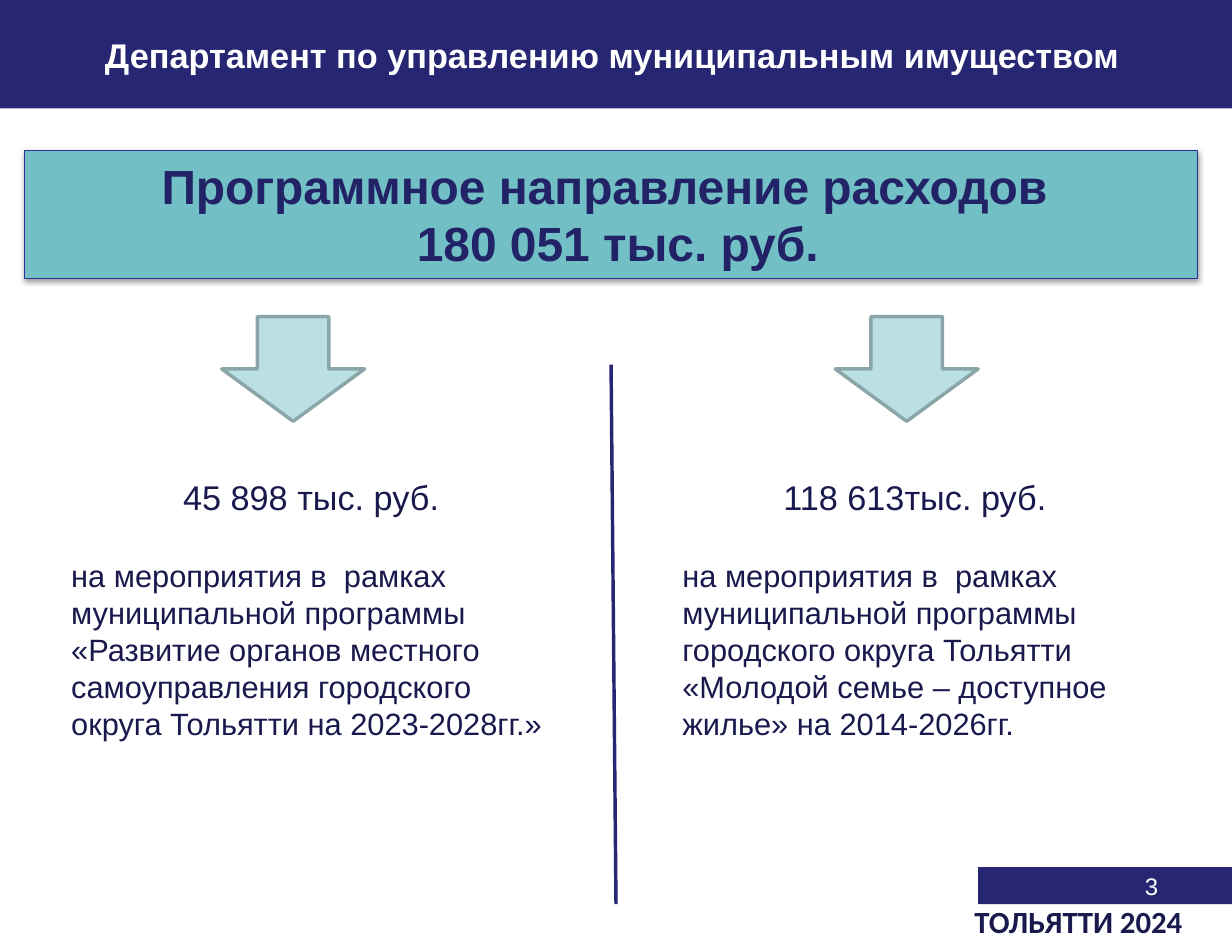
from lxml import etree
from pptx import Presentation
from pptx.dml.color import RGBColor
from pptx.enum.shapes import MSO_CONNECTOR, MSO_SHAPE
from pptx.enum.text import MSO_ANCHOR, PP_ALIGN
from pptx.oxml import parse_xml
from pptx.oxml.ns import nsdecls, qn
from pptx.util import Inches, Pt

NAVY = RGBColor(0x26, 0x26, 0x73)
INK = RGBColor(0x19, 0x19, 0x4D)
HEADLINE = RGBColor(0x22, 0x22, 0x67)
TEAL = RGBColor(0x72, 0xBF, 0xC5)
BANNER_EDGE = RGBColor(0x2F, 0x2F, 0x98)
PALE_TEAL = RGBColor(0xBB, 0xE0, 0xE3)
ARROW_EDGE = RGBColor(0x8A, 0xA6, 0xA8)
WHITE = RGBColor(0xFF, 0xFF, 0xFF)

PROGRAMMES = [
    (1.8, (0.48, 3.82, 4.17, 2.47), "45 898 тыс. руб. ",
     "на мероприятия в  рамках муниципальной программы «Развитие органов "
     "местного самоуправления городского округа Тольятти на 2023-2028гг.»"),
    (6.78, (5.44, 3.82, 4.05, 2.52), "118 613тыс. руб. ",
     "на мероприятия в  рамках муниципальной программы городского округа "
     "Тольятти «Молодой семье – доступное жилье» на 2014-2026гг."),
]


def add_block(slide, kind, box, fill, edge=None, edge_width=0):
    block = slide.shapes.add_shape(kind, *map(Inches, box))
    block.shadow.inherit = False
    block.fill.solid()
    block.fill.fore_color.rgb = fill
    if edge is None:
        block.line.fill.background()
    else:
        block.line.color.rgb = edge
        block.line.width = Pt(edge_width)
    return block


def add_label(slide, box):
    label = slide.shapes.add_textbox(*map(Inches, box))
    label.text_frame.word_wrap = True
    return label


def write(paragraph, text, size, color, align=PP_ALIGN.LEFT, **extra):
    paragraph.alignment = align
    run = paragraph.add_run()
    run.text = text
    font_format = {"name": "Arial", "size": Pt(size), "bold": False} | extra
    for attribute, value in font_format.items():
        setattr(run.font, attribute, value)
    run.font.color.rgb = color


def cast_shadow(block):
    effects = block._element.spPr.find(qn("a:effectLst"))
    effects.append(parse_xml(
        f'<a:outerShdw {nsdecls("a")} blurRad="{Pt(3.1)}" dist="{Pt(1.6)}" '
        'dir="5400000" rotWithShape="0"><a:srgbClr val="000000">'
        '<a:alpha val="38000"/></a:srgbClr></a:outerShdw>'))


def add_header(slide):
    header = add_block(slide, MSO_SHAPE.RECTANGLE, (0, 0, 10, 0.88), NAVY)
    frame = header.text_frame
    frame_format = {
        "margin_left": Inches(0.2), "margin_top": Inches(0.12),
        "margin_right": Inches(0.26), "margin_bottom": Inches(0.05),
        "vertical_anchor": MSO_ANCHOR.MIDDLE, "word_wrap": True,
    }
    for attribute, value in frame_format.items():
        setattr(frame, attribute, value)
    title = frame.paragraphs[0]
    title.line_spacing = 0.8
    write(title, "Департамент по управлению муниципальным имуществом",
          20, WHITE, PP_ALIGN.CENTER, bold=True)


def add_banner(slide):
    banner = add_block(slide, MSO_SHAPE.RECTANGLE, (0.2, 1.22, 9.52, 1.04),
                       TEAL, BANNER_EDGE, 0.75)
    cast_shadow(banner)
    frame = banner.text_frame
    frame.vertical_anchor = MSO_ANCHOR.TOP
    heading, total = frame.paragraphs[0], frame.add_paragraph()
    for paragraph, text in ((heading, "Программное направление расходов "),
                            (total, " 180 051 тыс. руб.")):
        write(paragraph, text, 28, HEADLINE, PP_ALIGN.CENTER, bold=True)


def add_divider(slide):
    divider = slide.shapes.add_connector(
        MSO_CONNECTOR.STRAIGHT, *map(Inches, (4.96, 2.96, 5, 7.34)))
    divider.line.color.rgb = NAVY
    divider.line.width = Pt(2)
    etree.SubElement(divider._element.spPr, qn("a:effectLst"))


def add_programme(slide, arrow_left, box, amount, purpose):
    add_block(slide, MSO_SHAPE.DOWN_ARROW, (arrow_left, 2.57, 1.16, 0.85),
              PALE_TEAL, ARROW_EDGE, 2)
    frame = add_label(slide, box).text_frame
    write(frame.paragraphs[0], amount, 20, INK, PP_ALIGN.CENTER)
    details = frame.add_paragraph()
    details.space_before = Pt(23)
    write(details, purpose, 18, INK)


def add_footer(slide):
    add_block(slide, MSO_SHAPE.RECTANGLE, (7.94, 7.04, 2.06, 0.3), NAVY)
    page = add_label(slide, (7.17, 7.03, 2.33, 0.54))
    write(page.text_frame.paragraphs[0], "3", 14, WHITE, PP_ALIGN.RIGHT)
    city = add_label(slide, (7.81, 7.34, 2.21, 0.35)).text_frame.paragraphs[0]
    city.line_spacing = 0.8
    write(city, "ТОЛЬЯТТИ 2024", 18, INK, name="Calibri", bold=True)


def main():
    deck = Presentation()
    deck.slide_width, deck.slide_height = Inches(10), Inches(7.72)
    slide = deck.slides.add_slide(deck.slide_layouts[6])
    add_footer(slide)
    add_header(slide)
    add_divider(slide)
    add_banner(slide)
    for programme in PROGRAMMES:
        add_programme(slide, *programme)
    deck.save("out.pptx")


if __name__ == "__main__":
    main()
